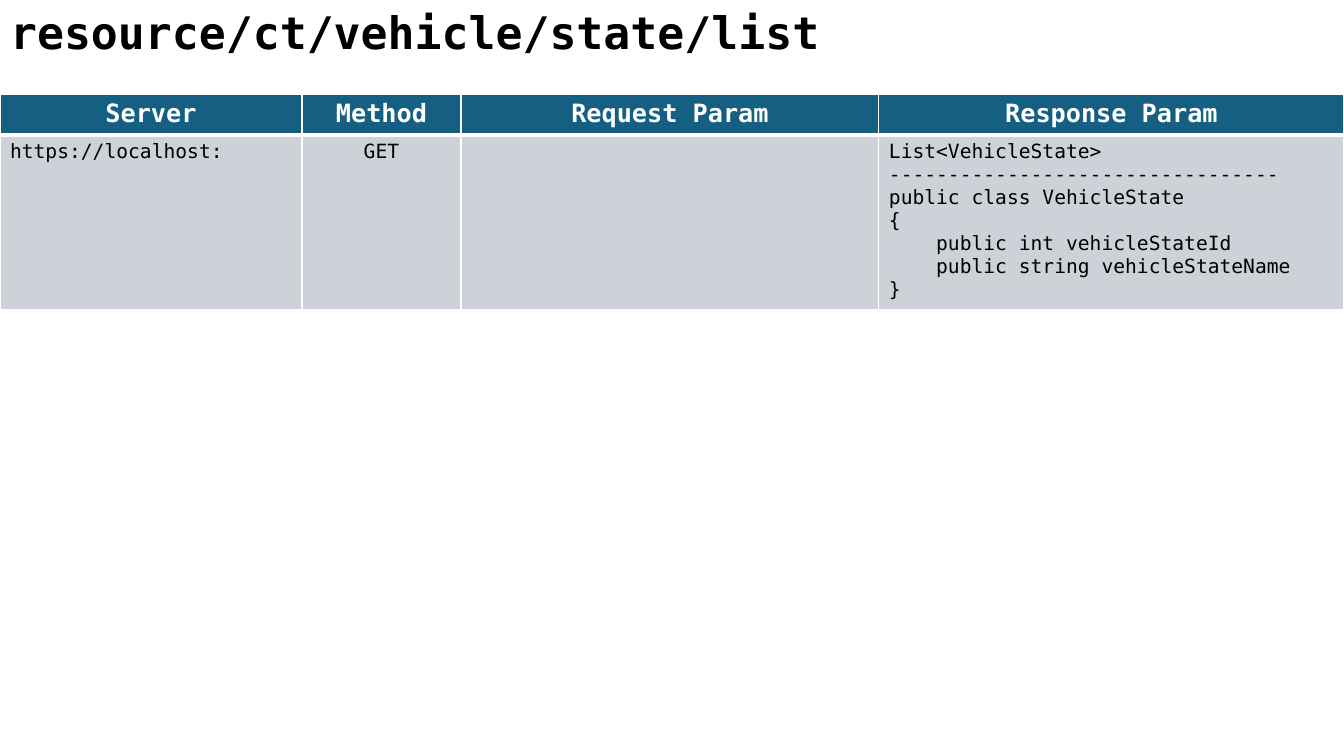
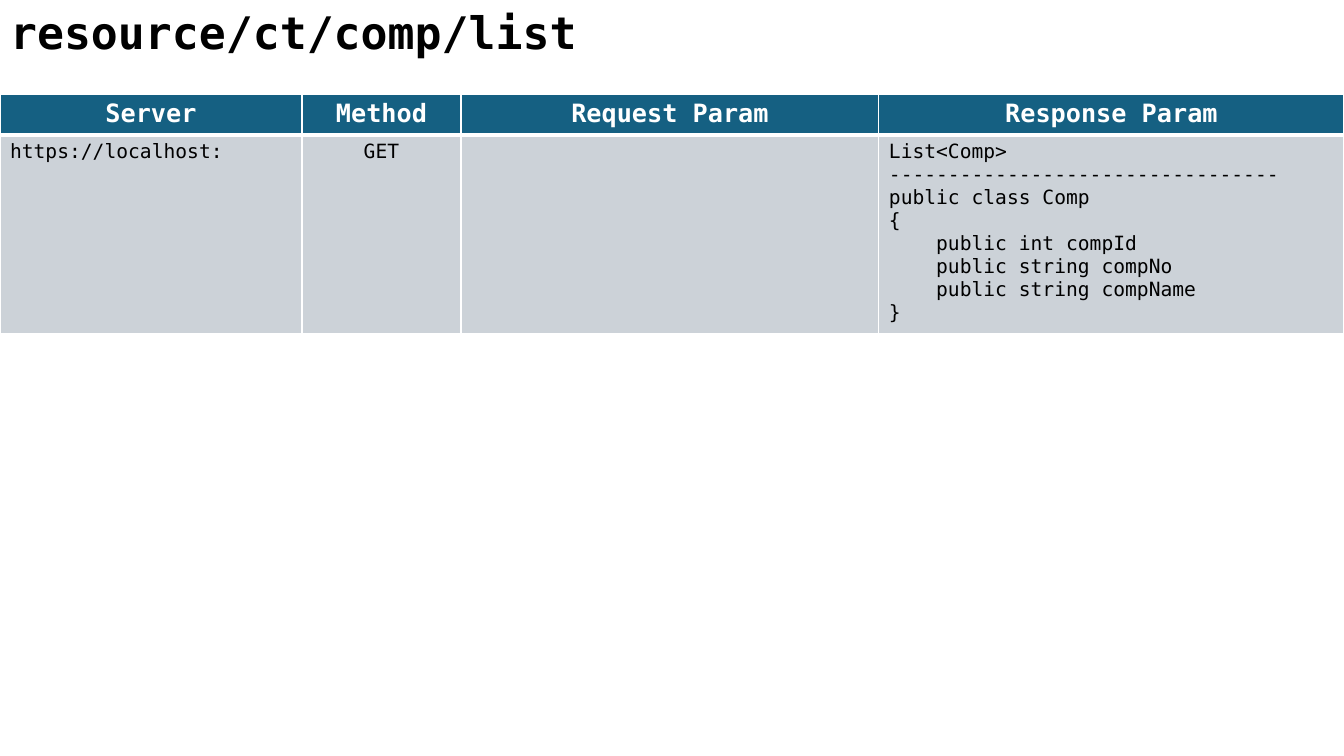
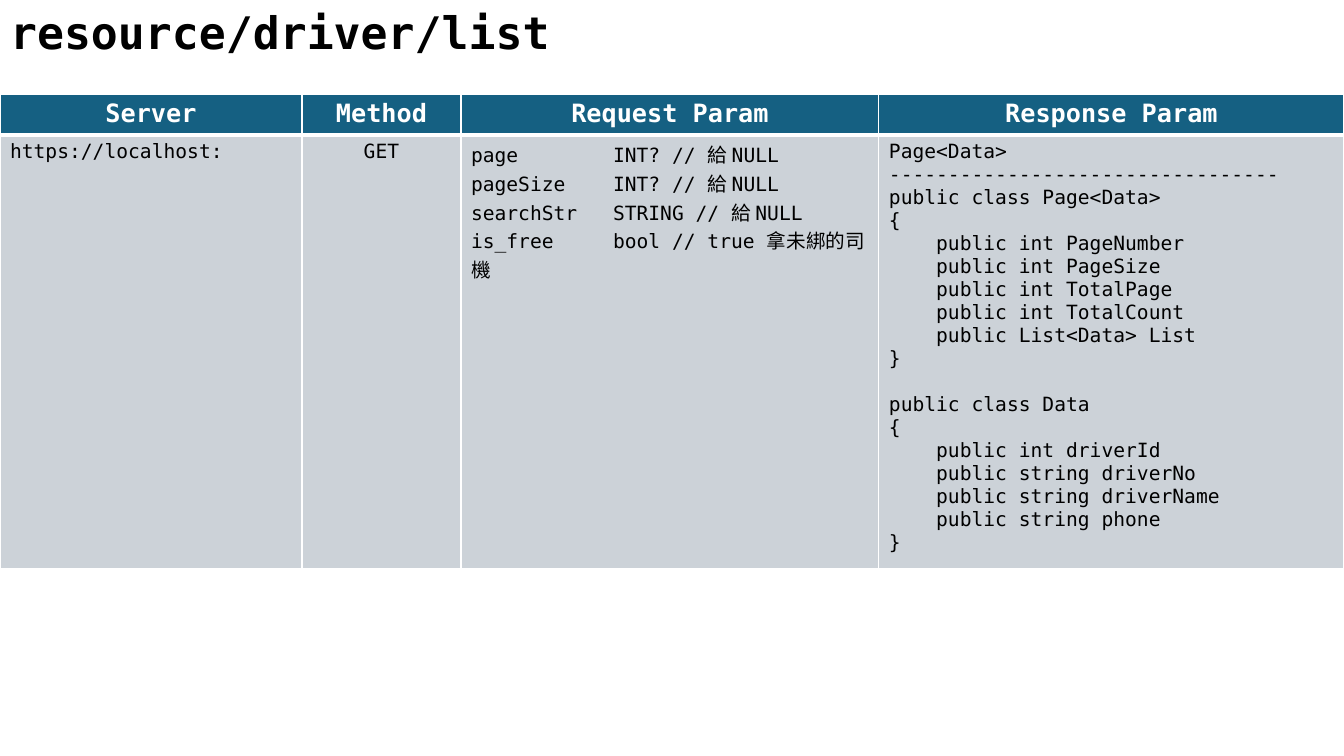
from pptx import Presentation
from pptx import util as u
from pptx.dml import color
from pptx.enum import text
from pptx.oxml import ns
from lxml import etree

PX = 914400 / 100.8
FONT = "DejaVu Sans Mono"
BLACK, WHITE, TEAL, GREY = "000000", "FFFFFF", "156082", "CCD2D8"
LEFT, CENTER = text.PP_ALIGN.LEFT, text.PP_ALIGN.CENTER

SLIDE_SIZE = (1344, 756)
TITLE_BOX = (0, 0, 953, 65)
TABLE_LEFT, TABLE_TOP = 0, 94
COLUMNS = [("Server", 302), ("Method", 159), ("Request Param", 418), ("Response Param", 465)]
ALIGNMENTS = [LEFT, CENTER, LEFT, LEFT]
HEADER_HEIGHT = 41
PARAM_TAB = 142
CLASS_GAP = u.Pt(16.4)
RULE = "-" * 33


def px(length):
    return u.Emu(round(length * PX))


def rgb(value):
    return color.RGBColor.from_string(value)


def style(para, size, shade, bold, align):
    para.alignment = align
    for span in para.runs:
        font = span.font
        font.name, font.size, font.bold = FONT, u.Pt(size), bold
        font.color.rgb = rgb(shade)


def code_class(name, *fields):
    return [f"public class {name}", "{", *(f"    public {field}" for field in fields), "}"]


def add_title(page, box, wording):
    title = page.shapes.title
    title.left, title.top, title.width, title.height = map(px, box)
    frame = title.text_frame
    frame.text = wording
    frame.word_wrap = True
    frame.auto_size = text.MSO_AUTO_SIZE.SHAPE_TO_FIT_TEXT
    frame.vertical_anchor = text.MSO_ANCHOR.TOP
    style(frame.paragraphs[0], 32, BLACK, True, LEFT)


def set_borders(cell, top, bottom):
    # Borders come before the fill in the cell properties
    properties = cell._tc.get_or_add_tcPr()
    widths = {"L": 1, "R": 1, "T": top, "B": bottom}
    for position, (side, width) in enumerate(widths.items()):
        line = etree.Element(ns.qn(f"a:ln{side}"), w=str(u.Pt(width)))
        fill = etree.SubElement(line, ns.qn("a:solidFill"))
        etree.SubElement(fill, ns.qn("a:srgbClr"), val=WHITE)
        properties.insert(position, line)


def add_tab(para, position):
    tabs = etree.SubElement(para._p.get_or_add_pPr(), ns.qn("a:tabLst"))
    etree.SubElement(tabs, ns.qn("a:tab"), pos=str(px(position)), algn="l")


def fill_cell(cell, blocks, fill, size, shade, bold, align):
    """Write blocks of lines; each block after the first has a gap above it."""
    cell.fill.solid()
    cell.fill.fore_color.rgb = rgb(fill)
    frame = cell.text_frame
    frame.text = "\n".join(line for block in blocks for line in block)
    paras = iter(frame.paragraphs)
    for number, block in enumerate(blocks):
        for row, line in enumerate(block):
            para = next(paras)
            if "\t" in line:
                add_tab(para, PARAM_TAB)
            if number and row == 0:
                para.space_before = CLASS_GAP
            style(para, size, shade, bold, align)


def add_api_table(page, left, top, body_height, request, response):
    width = sum(size for _, size in COLUMNS)
    frame = page.shapes.add_table(2, len(COLUMNS), px(left), px(top), px(width),
                                  px(HEADER_HEIGHT + body_height))
    table = frame.table
    table.horz_banding = False
    table.rows[0].height, table.rows[1].height = px(HEADER_HEIGHT), px(body_height)
    contents = [[["https://localhost:"]], [["GET"]], request, response]
    for index, (heading, column_width) in enumerate(COLUMNS):
        table.columns[index].width = px(column_width)
        header, body = table.cell(0, index), table.cell(1, index)
        fill_cell(header, [[heading]], TEAL, 18, WHITE, True, CENTER)
        fill_cell(body, contents[index], GREY, 14, BLACK, False, ALIGNMENTS[index])
        set_borders(header, 1, 3)
        set_borders(body, 3, 1)


def add_api_page(deck, path_name, body_height, request, response):
    page = deck.slides.add_slide(deck.slide_layouts.get_by_name("Title Only"))
    add_title(page, TITLE_BOX, path_name)
    add_api_table(page, TABLE_LEFT, TABLE_TOP, body_height, request, response)


# Path, body row height, request blocks, response blocks
ENDPOINTS = [
    ("resource/ct/vehicle/state/list", 174, [], [
        ["List<VehicleState>", RULE,
         *code_class("VehicleState", "int vehicleStateId", "string vehicleStateName")],
    ]),
    ("resource/ct/comp/list", 197, [], [
        ["List<Comp>", RULE,
         *code_class("Comp", "int compId", "string compNo", "string compName")],
    ]),
    ("resource/driver/list", 433, [
        ["page\tINT? // 給 NULL",
         "pageSize\tINT? // 給 NULL",
         "searchStr\tSTRING // 給 NULL",
         "is_free\tbool // true 拿未綁的司機"],
    ], [
        ["Page<Data>", RULE,
         *code_class("Page<Data>", "int PageNumber", "int PageSize", "int TotalPage",
                     "int TotalCount", "List<Data> List")],
        code_class("Data", "int driverId", "string driverNo", "string driverName",
                   "string phone"),
    ]),
]


def main():
    deck = Presentation()
    deck.slide_width, deck.slide_height = map(px, SLIDE_SIZE)
    for endpoint in ENDPOINTS:
        add_api_page(deck, *endpoint)
    deck.save("out.pptx")


if __name__ == "__main__":
    main()
